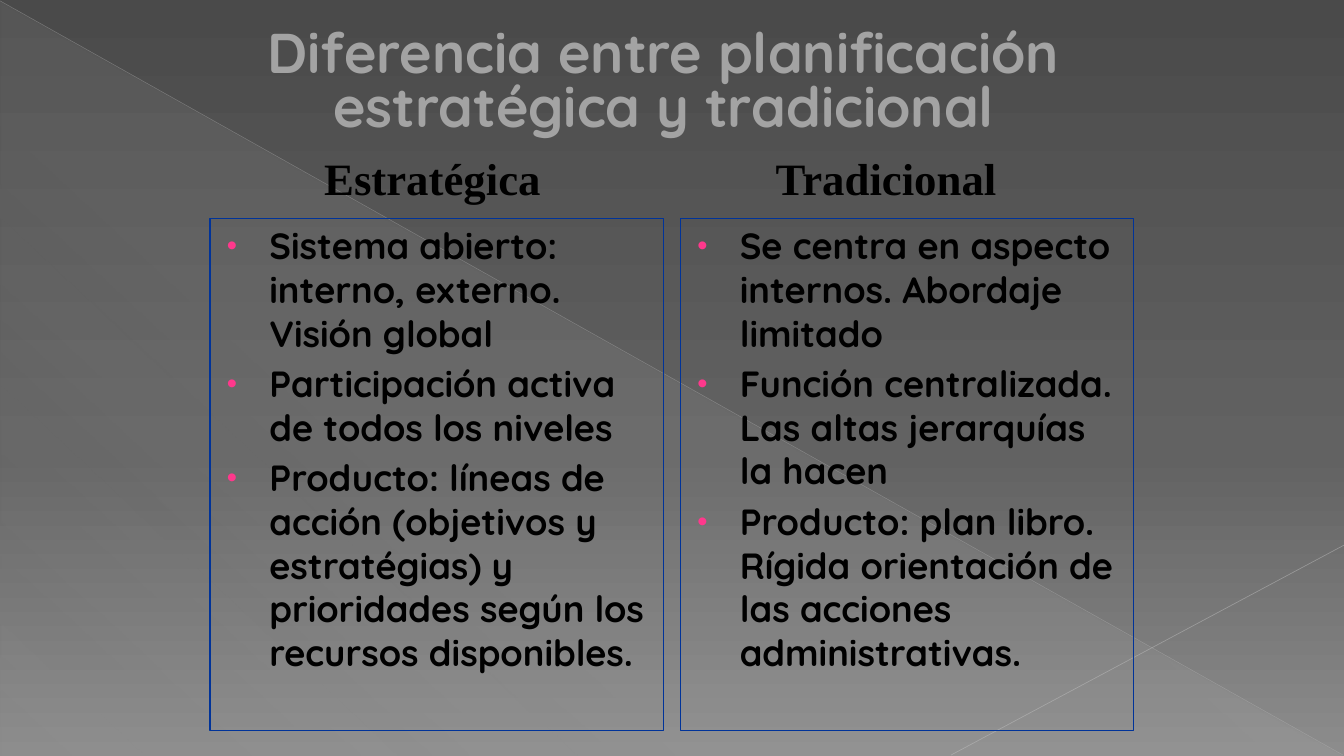
from lxml import etree
from pptx import Presentation
from pptx.dml.color import RGBColor
from pptx.enum.shapes import MSO_CONNECTOR, MSO_SHAPE
from pptx.enum.text import MSO_ANCHOR, PP_ALIGN
from pptx.oxml.ns import qn
from pptx.util import Inches, Pt

STRAIGHT = MSO_CONNECTOR.STRAIGHT
RECTANGLE, RIGHT_TRIANGLE = MSO_SHAPE.RECTANGLE, MSO_SHAPE.RIGHT_TRIANGLE
TOP, MIDDLE = MSO_ANCHOR.TOP, MSO_ANCHOR.MIDDLE
LEFT, CENTER = PP_ALIGN.LEFT, PP_ALIGN.CENTER

BLACK = RGBColor(0x00, 0x00, 0x00)
TITLE_GRAY = RGBColor(0xA3, 0xA3, 0xA3)
FRAME_BLUE = RGBColor(0x00, 0x33, 0x99)
BULLET_PINK = RGBColor(0xFF, 0x38, 0x8C)
DARK_GRAY = RGBColor(0x4A, 0x4A, 0x4A)
MIDDLE_GRAY = RGBColor(0x62, 0x62, 0x62)
LIGHT_GRAY = RGBColor(0x8C, 0x8C, 0x8C)
VEIL_GRAY = RGBColor(0xD2, 0xD2, 0xD2)
DIAGONAL_GRAY = RGBColor(0xBF, 0xBF, 0xBF)
CORNER_GRAY = RGBColor(0xC6, 0xC6, 0xC6)

COLUMNS, ROWS = 160, 90
BODY_FONT, HEADING_FONT = "Quicksand", "Times New Roman"


def add_child(parent, tag, **attributes):
    child = etree.SubElement(parent, qn(tag))
    for name, value in attributes.items():
        child.set(name, str(value))
    return child


def set_opacity(color_element, percent):
    add_child(color_element, "a:alpha", val=percent * 1000)


class ComparisonSlide:
    """Draws the elements of a comparison slide on a 160 by 90 grid."""

    def __init__(self, presentation):
        self.width = presentation.slide_width
        self.height = presentation.slide_height
        self.slide = presentation.slides.add_slide(presentation.slide_layouts[6])
        self.shapes = self.slide.shapes

    def place(self, column, row):
        return round(self.width * column / COLUMNS), round(self.height * row / ROWS)

    def gradient(self, fill, owner, angle, stops):
        fill.gradient()
        fill.gradient_angle = 360 - angle
        stop_list = next(owner.iter(qn("a:gsLst")))
        for stop in list(stop_list):
            stop_list.remove(stop)
        for position, color, opacity in stops:
            stop = add_child(stop_list, "a:gs", pos=position * 1000)
            set_opacity(add_child(stop, "a:srgbClr", val=color), opacity)

    def background(self, angle, stops):
        self.gradient(self.slide.background.fill, self.slide.element, angle, stops)

    def shape(self, kind, column, row, columns, rows):
        shape = self.shapes.add_shape(
            kind, *self.place(column, row), *self.place(columns, rows))
        shape.shadow.inherit = False
        return shape

    def veil(self, column, row, columns, rows, angle, stops):
        shape = self.shape(RIGHT_TRIANGLE, column, row, columns, rows)
        shape.line.fill.background()
        self.gradient(shape.fill, shape.element, angle, stops)

    def line(self, start, end, color, width, opacity):
        connector = self.shapes.add_connector(
            STRAIGHT, *self.place(*start), *self.place(*end))
        connector.line.color.rgb = color
        connector.line.width = Pt(width)
        properties = connector.element.spPr
        set_opacity(next(properties.iter(qn("a:srgbClr"))), opacity)
        add_child(properties, "a:effectLst")

    def style(self, paragraph, size, font, color, alignment):
        paragraph.alignment = alignment
        paragraph.font.size = Pt(size)
        paragraph.font.name = font
        paragraph.font.bold = True
        paragraph.font.color.rgb = color

    def label(self, text, column, row, columns, rows, size, font, color,
              wrap=False, anchor=TOP, spacing=1.0):
        box = self.shapes.add_textbox(
            *self.place(column, row), *self.place(columns, rows))
        frame = box.text_frame
        frame.word_wrap = wrap
        frame.vertical_anchor = anchor
        paragraph = frame.paragraphs[0]
        paragraph.text = text
        paragraph.line_spacing = spacing
        self.style(paragraph, size, font, color, CENTER)

    def bullet(self, paragraph):
        properties = paragraph._p.get_or_add_pPr()
        properties.set("marL", str(Inches(0.49)))
        properties.set("indent", str(Inches(-0.42)))
        marker = [
            add_child(properties, "a:buClr"),
            add_child(properties, "a:buSzPct", val=80000),
            add_child(properties, "a:buFont", typeface="Arial"),
            add_child(properties, "a:buChar", char="•"),
        ]
        add_child(marker[0], "a:srgbClr", val=BULLET_PINK)
        defaults = properties.find(qn("a:defRPr"))
        if defaults is not None:
            properties.append(defaults)

    def bullet_panel(self, items, column, row, columns, rows):
        panel = self.shape(RECTANGLE, column, row, columns, rows)
        panel.fill.background()
        panel.line.color.rgb = FRAME_BLUE
        panel.line.width = Pt(0.75)
        frame = panel.text_frame
        frame.word_wrap = True
        frame.vertical_anchor = TOP
        frame.text = "\n".join(items)
        for paragraph in frame.paragraphs:
            paragraph.space_before = Pt(5)
            self.style(paragraph, 26, BODY_FONT, BLACK, LEFT)
            self.bullet(paragraph)


def main():
    presentation = Presentation()
    presentation.slide_width = Inches(13.33)
    presentation.slide_height = Inches(7.5)
    comparison = ComparisonSlide(presentation)

    comparison.background(
        90, [(0, DARK_GRAY, 100), (60, MIDDLE_GRAY, 100), (100, LIGHT_GRAY, 100)])
    comparison.veil(
        0.1, 0.2, 159.8, 89.8, 133,
        [(0, VEIL_GRAY, 10), (70, VEIL_GRAY, 8), (100, VEIL_GRAY, 1)])
    comparison.line((0, 0.1), (159.9, 89.9), DIAGONAL_GRAY, 0.39, 35)
    comparison.line((160, 64.9), (113.2, 89.9), CORNER_GRAY, 0.47, 45)

    comparison.label(
        "Diferencia entre planificación estratégica y tradicional",
        28, 3, 102, 14, 40, BODY_FONT, TITLE_GRAY,
        wrap=True, anchor=MIDDLE, spacing=0.8)

    sides = [
        ("Estratégica", 37.4, 17.3, 28.2, 25, [
            "Sistema abierto: interno, externo. Visión global",
            "Participación activa de todos los niveles",
            "Producto: líneas de acción (objetivos y estratégias) y "
            "prioridades según los recursos disponibles.",
        ]),
        ("Tradicional", 91, 17.4, 29, 81, [
            "Se centra en aspecto internos. Abordaje limitado",
            "Función centralizada. Las altas jerarquías la hacen",
            "Producto: plan libro. Rígida orientación de las acciones "
            "administrativas.",
        ]),
    ]
    for heading, column, row, columns, panel_column, items in sides:
        comparison.bullet_panel(items, panel_column, 26, 54, 61)
        comparison.label(heading, column, row, columns, 7.6, 32, HEADING_FONT, BLACK)

    presentation.save("out.pptx")


if __name__ == "__main__":
    main()
